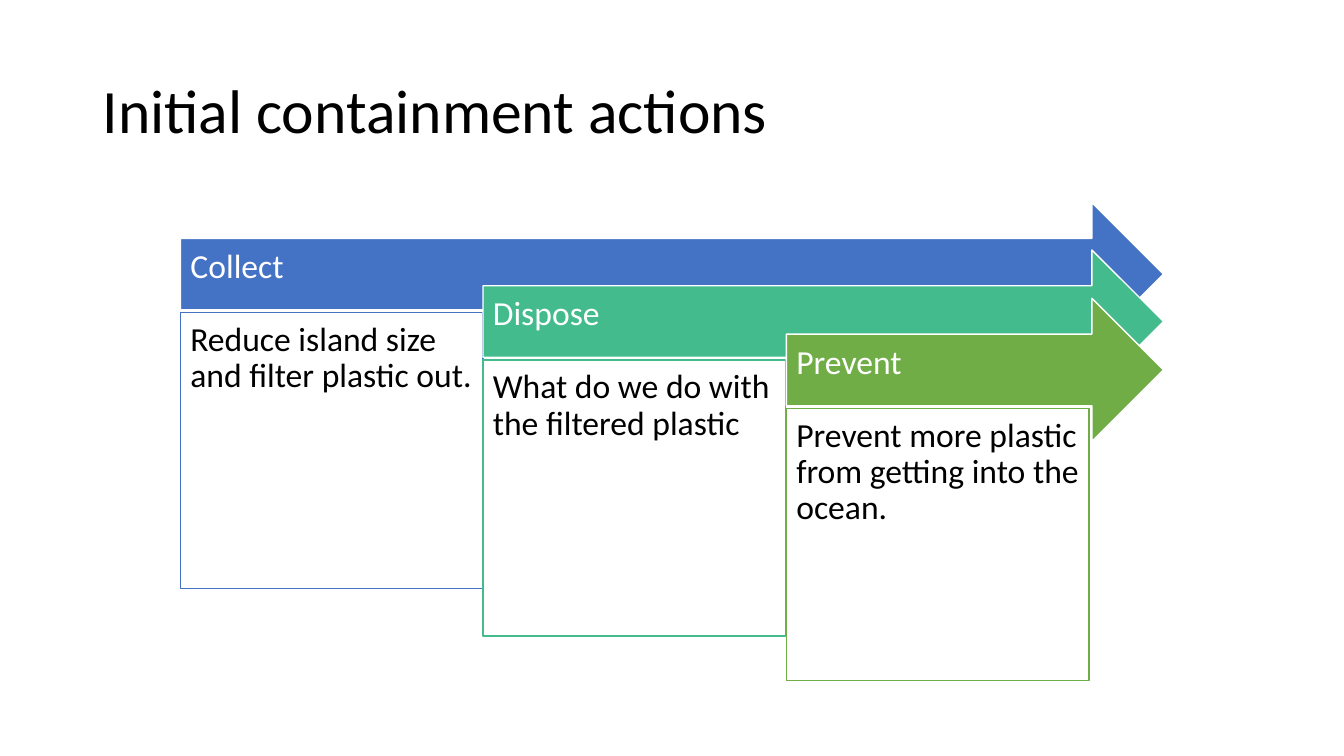
from dataclasses import dataclass

from pptx import Presentation
from pptx import util as u
from pptx.dml.color import RGBColor
from pptx.enum import shapes, text


@dataclass(frozen=True)
class Theme:
    font: str = "Calibri"
    head: int = 44
    body: int = 24
    ink: str = "000000"
    paper: str = "FFFFFF"
    blue: str = "4472C4"
    teal: str = "43BB8D"
    green: str = "70AD47"


THEME = Theme()
SCALE = 9144  # EMU in one px, 100 px to the inch
LEFT, TOP, TIP = 179, 201, 1154
STEPS = [
    ("Collect", "Reduce island size and filter plastic out.", THEME.blue, 274),
    ("Dispose", "What do we do with the filtered plastic", THEME.teal, 274),
    ("Prevent", "Prevent more plastic from getting into the ocean.",
     THEME.green, 270),
]


def px(*sizes):
    return [u.Emu(size * SCALE) for size in sizes]


def write(shape, words, size=THEME.body, color=THEME.ink,
          anchor=text.MSO_ANCHOR.TOP, pads=(10, 10, 10, 10)):
    """Fill a shape with one left-aligned paragraph; pads run l, t, r, b."""
    frame = shape.text_frame
    frame.word_wrap = True
    frame.vertical_anchor = anchor
    (frame.margin_left, frame.margin_top,
     frame.margin_right, frame.margin_bottom) = px(*pads)
    para = frame.paragraphs[0]
    para.alignment = text.PP_ALIGN.LEFT
    para.line_spacing = 0.9
    run = para.add_run()
    run.text = words
    run.font.name = THEME.font
    run.font.size = u.Pt(size)
    run.font.color.rgb = RGBColor.from_string(color)


def block(slide, kind, box, fill, line):
    shape = slide.shapes.add_shape(kind, *px(*box))
    shape.shadow.inherit = False
    shape.fill.solid()
    shape.fill.fore_color.rgb = RGBColor.from_string(fill)
    shape.line.color.rgb = RGBColor.from_string(line)
    shape.line.width = u.Pt(1)
    return shape


def title(slide, words):
    box = slide.shapes.add_textbox(*px(92, 40, 1150, 145))
    write(box, words, size=THEME.head, anchor=text.MSO_ANCHOR.MIDDLE,
          pads=(10, 5, 10, 5))


def step(slide, index, name, detail, color, height):
    """Draw one arrow with its detail card, offset by its index."""
    left = LEFT + index * 601 // 2
    top = TOP + index * 95 // 2
    arrow = block(slide, shapes.MSO_SHAPE.RIGHT_ARROW,
                  (left, top, TIP - left, 142), color, THEME.paper)
    write(arrow, name, color=THEME.paper, anchor=text.MSO_ANCHOR.MIDDLE,
          pads=(10, 10, 28, 23))
    card = block(slide, shapes.MSO_SHAPE.RECTANGLE,
                 (left, top + 109, 300, height), THEME.paper, color)
    write(card, detail)


def main():
    deck = Presentation()
    deck.slide_width, deck.slide_height = px(1333, 750)
    slide = deck.slides.add_slide(deck.slide_layouts[6])
    title(slide, "Initial containment actions")
    for index, row in enumerate(STEPS):
        step(slide, index, *row)
    deck.save("out.pptx")


if __name__ == "__main__":
    main()
